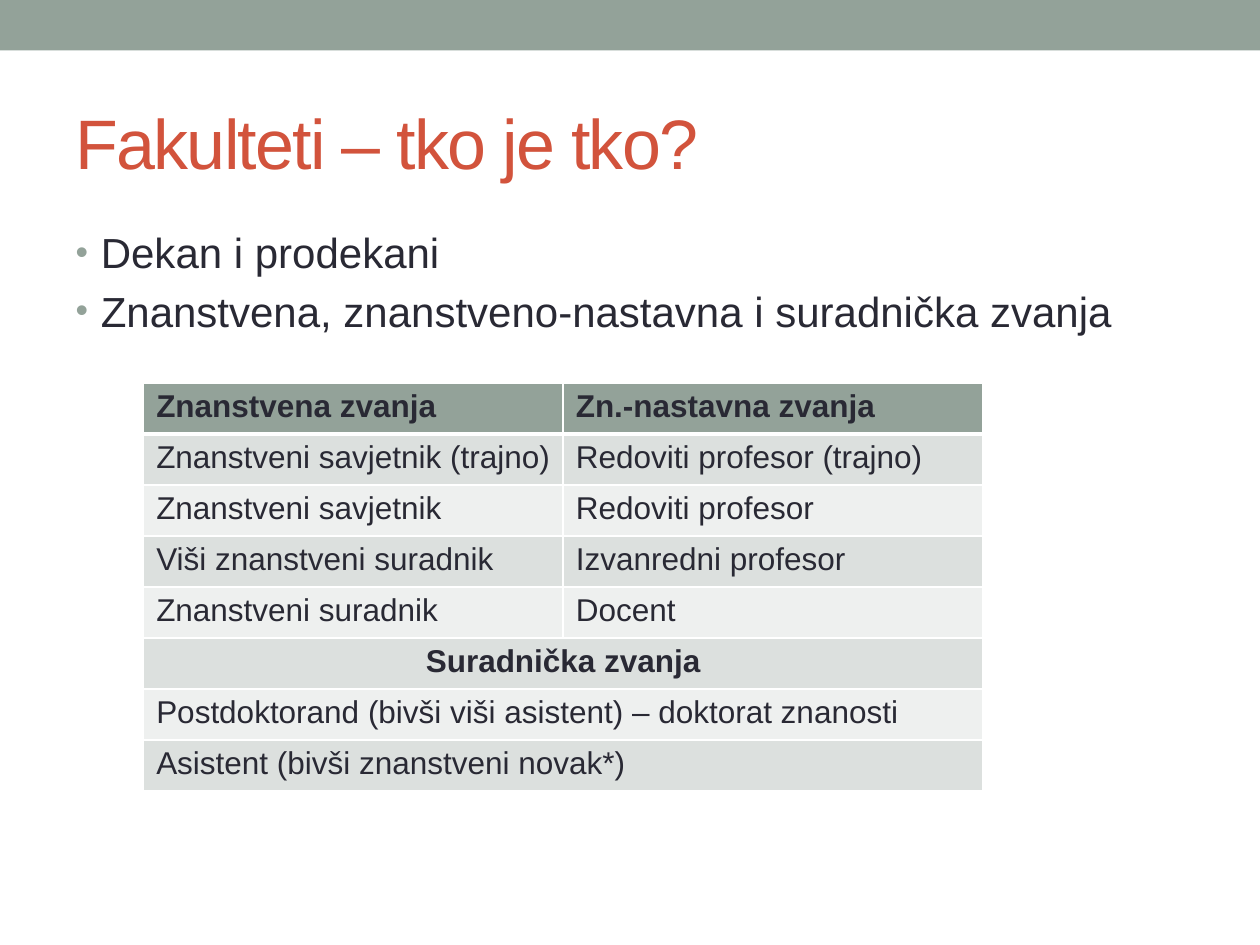
from dataclasses import dataclass

from lxml.etree import SubElement
from pptx import Presentation
from pptx.dml.color import RGBColor
from pptx.enum.shapes import MSO_SHAPE
from pptx.enum.text import MSO_ANCHOR, MSO_AUTO_SIZE, PP_ALIGN
from pptx.oxml import parse_xml
from pptx.oxml.ns import nsdecls, qn
from pptx.util import Emu, Inches, Pt

SAGE = RGBColor(0x93, 0xA2, 0x99)
RUST = RGBColor(0xD2, 0x53, 0x3C)
INK = RGBColor(0x29, 0x29, 0x34)
WHITE = RGBColor(0xFF, 0xFF, 0xFF)
DARK_BAND = RGBColor(0xDC, 0xE0, 0xDE)
LIGHT_BAND = RGBColor(0xEE, 0xF0, 0xEF)

FONT = "Arial"
WIDTH, HEIGHT = Inches(10), Inches(7.5)
MARGIN = 0.05  # share of the slide's width
COLUMN, ROW = Inches(3.33), Inches(0.405)


@dataclass(frozen=True)
class TableRow:
    texts: tuple[str, ...]  # a single text spans both columns
    bold: bool = False
    align: PP_ALIGN = PP_ALIGN.LEFT


BULLETS = ("Dekan i prodekani", "Znanstvena, znanstveno-nastavna i suradnička zvanja")
ROWS = (
    TableRow(("Znanstvena zvanja", "Zn.-nastavna zvanja"), bold=True),
    TableRow(("Znanstveni savjetnik (trajno)", "Redoviti profesor (trajno)")),
    TableRow(("Znanstveni savjetnik", "Redoviti profesor")),
    TableRow(("Viši znanstveni suradnik", "Izvanredni profesor")),
    TableRow(("Znanstveni suradnik", "Docent")),
    TableRow(("Suradnička zvanja",), bold=True, align=PP_ALIGN.CENTER),
    TableRow(("Postdoktorand (bivši viši asistent) – doktorat znanosti",)),
    TableRow(("Asistent (bivši znanstveni novak*)",)),
)


def write(paragraph, text: str, *, size: float, color: RGBColor = INK,
          bold: bool = False, align: PP_ALIGN = PP_ALIGN.LEFT, spacing: float = 0) -> None:
    """Add one formatted run; size and letter spacing are in points."""
    paragraph.alignment = align
    run = paragraph.add_run()
    run.text = text
    run.font.name, run.font.size, run.font.bold = FONT, Pt(size), bold
    run.font.color.rgb = color
    if spacing:
        run._r.get_or_add_rPr().set("spc", str(int(spacing * 100)))


def place(shape, top: float, height: float, anchor: MSO_ANCHOR) -> None:
    """Move a placeholder between the margins; top and height are slide shares."""
    shape.left, shape.width = int(WIDTH * MARGIN), int(WIDTH * (1 - 2 * MARGIN))
    shape.top, shape.height = int(HEIGHT * top), int(HEIGHT * height)
    frame = shape.text_frame
    frame.word_wrap, frame.auto_size = True, MSO_AUTO_SIZE.NONE
    frame.vertical_anchor = anchor


def add_bullet(paragraph) -> None:
    properties = paragraph._p.get_or_add_pPr()
    properties.set("marL", str(Inches(0.2)))
    properties.set("indent", str(-Inches(0.2)))
    color = SubElement(properties, qn("a:buClr"))
    SubElement(color, qn("a:srgbClr"), val=str(SAGE))
    SubElement(properties, qn("a:buSzPct"), val="85000")
    SubElement(properties, qn("a:buFont"), typeface=FONT)
    SubElement(properties, qn("a:buChar"), char="•")


def set_borders(cell, **widths: float) -> None:
    """Draw white cell borders, given in points for L, R, T and B."""
    properties = cell._tc.get_or_add_tcPr()
    for index, side in enumerate("LRTB"):
        line = parse_xml(
            f'<a:ln{side} {nsdecls("a")} w="{Pt(widths.get(side, 1))}">'
            f'<a:solidFill><a:srgbClr val="{WHITE}"/></a:solidFill></a:ln{side}>')
        properties.insert(index, line)


def add_ranks_table(slide, left: Emu, top: Emu) -> None:
    table = slide.shapes.add_table(len(ROWS), 2, left, top, 2 * COLUMN, len(ROWS) * ROW).table
    for number, row in enumerate(ROWS):
        if len(row.texts) == 1:
            table.cell(number, 0).merge(table.cell(number, 1))
        fill = SAGE if number == 0 else DARK_BAND if number % 2 else LIGHT_BAND
        for cell in table.rows[number].cells:
            cell.fill.solid()
            cell.fill.fore_color.rgb = fill
            set_borders(cell, T=3 if number == 1 else 1, B=3 if number == 0 else 1)
        for column, text in enumerate(row.texts):
            write(table.cell(number, column).text_frame.paragraphs[0], text,
                  size=18, bold=row.bold, align=row.align)


def main() -> None:
    presentation = Presentation()
    presentation.slide_width, presentation.slide_height = WIDTH, HEIGHT
    slide = presentation.slides.add_slide(presentation.slide_layouts[1])
    title, body = slide.placeholders

    # Top band
    band = slide.shapes.add_shape(MSO_SHAPE.RECTANGLE, 0, 0, WIDTH, Inches(0.4))
    band.shadow.inherit = False
    band.fill.solid()
    band.fill.fore_color.rgb = SAGE
    band.line.fill.background()

    # Title
    place(title, 0.078, 0.144, MSO_ANCHOR.MIDDLE)
    write(title.text_frame.paragraphs[0], "Fakulteti – tko je tko?",
          size=40, color=RUST, spacing=-1)

    # Bullet list
    place(body, 0.233, 0.711, MSO_ANCHOR.TOP)
    for index, text in enumerate(BULLETS):
        frame = body.text_frame
        paragraph = frame.add_paragraph() if index else frame.paragraphs[0]
        write(paragraph, text, size=24)
        add_bullet(paragraph)

    # Table of academic ranks
    add_ranks_table(slide, Inches(1.14), Inches(3.04))
    presentation.save("out.pptx")


if __name__ == "__main__":
    main()
